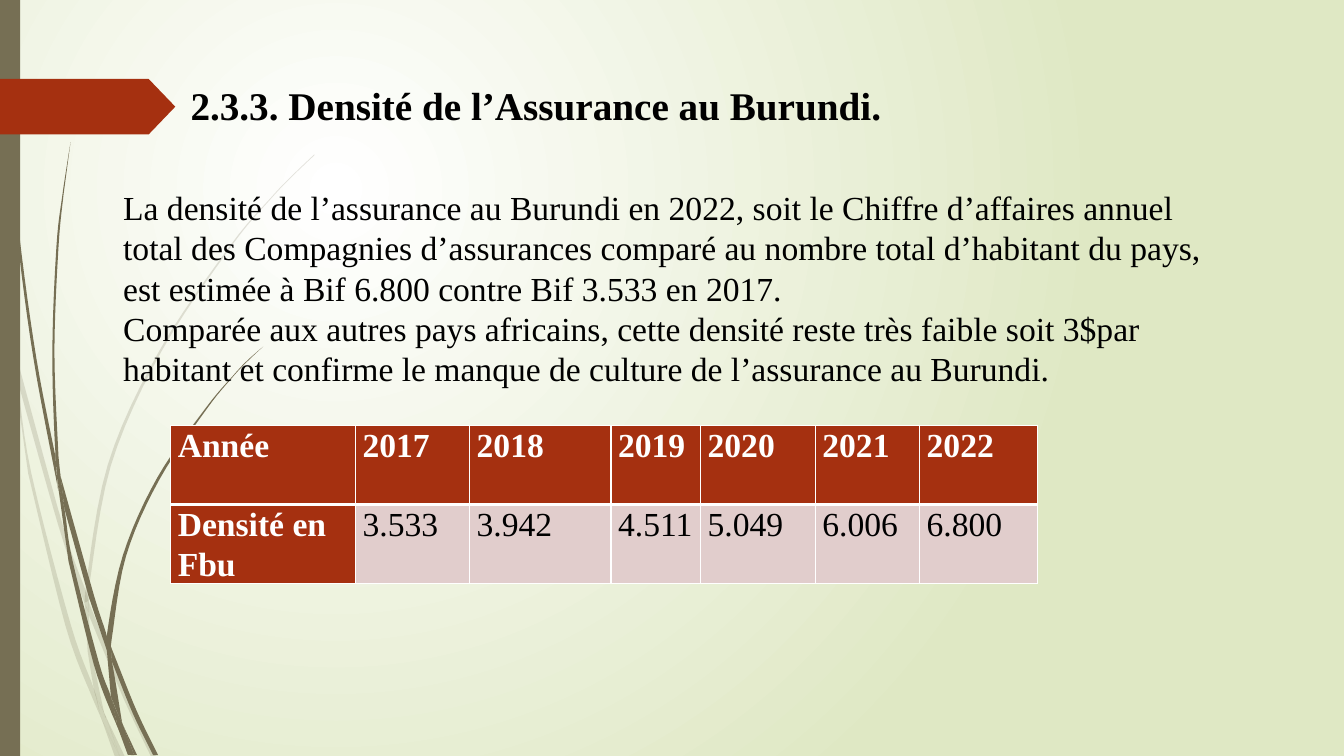
from lxml.etree import SubElement
from pptx import Presentation
from pptx.dml.color import RGBColor
from pptx.enum.shapes import MSO_SHAPE
from pptx.enum.text import MSO_ANCHOR, MSO_AUTO_SIZE, PP_ALIGN
from pptx.oxml.ns import qn
from pptx.util import Pt

WHITE = RGBColor(0xFF, 0xFF, 0xFF)
BLACK = RGBColor(0, 0, 0)
LIME = RGBColor(0xDF, 0xE8, 0xC4)
OLIVE = RGBColor(0x76, 0x6F, 0x54)
RUST = RGBColor(0xA5, 0x30, 0x10)
ROSE = RGBColor(0xE1, 0xCD, 0xCC)
FACE = "Times New Roman"

# Each blade part has two smooth edges: one way out, one way back.
PALE = [
    ([(0, 203), (6.5, 231.8), (7.9, 252)], [(7.2, 247.7), (0, 215.3)]),
    ([(10.1, 248.4), (44.6, 374.4), (61.2, 421.9)],
     [(60.5, 431.3), (41.8, 375.8), (12.2, 270.7)]),
    ([(63.4, 429.1), (66.2, 437), (91.4, 498.2), (111.6, 540.7)],
     [(108, 540.7), (88.6, 499.7), (63.4, 439.2)]),
    ([(75.6, 511.9), (89.3, 540.7)], [(85.7, 540.7)]),
    ([(7.9, 252), (12.2, 270.7), (22.3, 337.7), (50.4, 445.7), (67, 491.8),
      (71.3, 509), (72.7, 514.1)], [(66.2, 499), (46.8, 447.1), (20.2, 338.4)]),
    ([(60.5, 431.3), (63.4, 439.2), (65.5, 465.1), (74.2, 508.3), (75.6, 511.9)],
     [(69.1, 498.2), (67, 491.8), (62.6, 465.1)]),
    ([(224.6, 110.2), (208.1, 126), (193, 141.8), (164.2, 175.7), (113.8, 250.6),
      (77, 331.9), (61.2, 420.5), (63.4, 429.1)],
     [(63.4, 420.5), (79.2, 332.6), (115.2, 251.3), (164.9, 176.4), (193, 142.6),
      (208.8, 126), (224.6, 110.9)]),
    ([(72.7, 514.1), (85.7, 540.7)], [(82.1, 540.7)]),
    ([(61.2, 421.9), (63.4, 429.1), (63.4, 439.2)], [(63.4, 437.8), (60.5, 431.3)]),
    ([(67, 491.8), (69.1, 498.2), (75.6, 511.9), (85.7, 540.7)],
     [(72.7, 514.1), (71.3, 509)]),
]
DARK = [
    ([(2.2, 0), (2.9, 34.6), (5, 79.2), (12.2, 167.8), (23.8, 255.6), (40.3, 343.4),
      (41, 346.3)], [(39.6, 326.2), (25.9, 255.6), (13.7, 167), (5.8, 78.5),
                     (3.6, 34.6), (2.9, 0)]),
    ([(43.2, 339.8), (67, 424.8), (76.3, 454.3), (76.3, 464.4)],
     [(63.4, 426.2), (46.1, 363.6)]),
    ([(79.2, 461.5), (81.4, 467.3), (97.9, 508.3), (113, 539.3)],
     [(109.4, 539.3), (95, 509.8), (79.9, 472.3)]),
    ([(41, 343.4), (46.1, 363.6), (51.8, 400.3), (70.6, 473), (79.2, 497.5),
      (83.5, 516.2), (84.2, 519.8)], [(79.9, 509.8), (67, 474.5), (49, 401)]),
    ([(50.4, 101.5), (44.6, 139), (40.3, 176.4), (37.4, 251.3), (39.6, 323.3),
      (43.2, 339.8)], [(41.8, 326.2), (38.9, 251.3), (41.8, 176.4), (45.4, 139)]),
    ([(87.8, 517.7), (97.9, 539.3)], [(95.8, 539.3)]),
    ([(39.6, 323.3), (43.2, 339.8), (46.1, 363.6)], [(41, 343.4), (39.6, 326.2)]),
    ([(187.9, 247.7), (176.4, 257.8), (166.3, 268.6), (146.9, 291.6), (112.3, 341.3),
      (87.8, 396.7), (76.3, 454.3), (79.2, 461.5)],
     [(79.9, 455.8), (90, 397.4), (113.8, 342.7), (147.6, 292.3), (166.3, 269.3),
      (176.4, 258.5), (187.9, 247.7)]),
    ([(84.2, 519.8), (94.3, 539.3)], [(91.4, 539.3)]),
    ([(76.3, 464.4), (79.9, 472.3), (87.1, 515.5), (87.8, 517.7)],
     [(83.5, 508.3), (79.2, 497.5)]),
    ([(76.3, 454.3), (79.2, 461.5), (79.9, 472.3)], [(78.5, 468.7), (76.3, 464.4)]),
    ([(79.2, 497.5), (83.5, 508.3), (87.8, 517.7), (95.8, 539.3)],
     [(93.6, 539.3), (84.2, 519.8), (83.5, 516.2)]),
]
TITLE = "2.3.3. Densité de l’Assurance au Burundi."
BODY = [
    "La densité de l’assurance au Burundi en 2022, soit le Chiffre d’affaires "
    "annuel total des Compagnies d’assurances comparé au nombre total d’habitant "
    "du pays, est estimée à Bif 6.800 contre Bif 3.533 en 2017.",
    "Comparée aux autres pays africains, cette densité reste très faible soit "
    "3$par habitant et confirme le manque de culture de l’assurance au Burundi.",
]
ROWS = [["Année", "2017", "2018", "2019", "2020", "2021", "2022"],
        ["Densité en Fbu", "3.533", "3.942", "4.511", "5.049", "6.006", "6.800"]]
WIDTHS = [132, 81.5, 101, 64, 82, 74.5, 84]


def paint(shape, color):
    shape.shadow.inherit = False
    shape.fill.solid()
    shape.fill.fore_color.rgb = color
    shape.line.fill.background()


def style(para, size, bold, color):
    font = para.font
    font.name, font.size, font.bold = FACE, Pt(size), bold
    font.color.rgb = color


def smooth(dots, steps=6):
    ends = [dots[0]] + dots + [dots[-1]]
    out = []
    for four in zip(ends, ends[1:], ends[2:], ends[3:]):
        for t in (i / steps for i in range(steps)):
            out.append([q + t * (r - p + t * (2 * p - 5 * q + 4 * r - s
                                              + t * (3 * q - p - 3 * r + s))) / 2
                        for p, q, r, s in zip(*four)])
    return out + [dots[-1]]


def add_blade(slide, edges, alpha=None):
    dots = [(Pt(x), Pt(y)) for edge in edges for x, y in smooth(edge)]
    form = slide.shapes.build_freeform(*dots[0])
    form.add_line_segments(dots[1:], close=True)
    blade = form.convert_to_shape()
    paint(blade, OLIVE)
    if alpha:
        tone = blade.element.spPr.find(qn("a:solidFill"))[0]
        SubElement(tone, qn("a:alpha"), val=str(alpha * 1000))


def add_back(slide):
    fill = slide.background.fill
    fill.gradient()
    for stop, color, at in zip(fill.gradient_stops, (WHITE, LIME), (0, 1)):
        stop.color.rgb = color
        stop.position = at
    grad = next(slide.element.iter(qn("a:gradFill")))
    grad.remove(grad.find(qn("a:lin")))
    path = SubElement(grad, qn("a:path"), path="circle")
    SubElement(path, qn("a:fillToRect"), l="25000", t="25000", r="75000", b="75000")


def add_decor(slide, high):
    for group, alpha in ((PALE, 20), (DARK, None)):
        for edges in group:
            add_blade(slide, edges, alpha)
    bar = slide.shapes.add_shape(MSO_SHAPE.RECTANGLE, 0, 0, Pt(14.4), high)
    paint(bar, OLIVE)
    flag = slide.shapes.add_shape(MSO_SHAPE.PENTAGON, 0, Pt(56.4), Pt(125.2), Pt(39.6))
    flag.adjustments[0] = 0.48
    paint(flag, RUST)


def add_text(holder, box, lines, size, bold):
    holder.left, holder.top, holder.width, holder.height = map(Pt, box)
    holder.element.getparent().append(holder.element)
    frame = holder.text_frame
    frame.word_wrap = True
    frame.auto_size = MSO_AUTO_SIZE.NONE
    frame.vertical_anchor = MSO_ANCHOR.MIDDLE
    frame.text = "\n".join(lines)
    for para in frame.paragraphs:
        style(para, size, bold, BLACK)
        para.alignment = PP_ALIGN.LEFT
        para.space_before = Pt(0)
        props = para._p.get_or_add_pPr()
        props.set("marL", "0")
        props.set("indent", "0")
        props.insert_element_before(
            props.makeelement(qn("a:buNone")), "a:tabLst", "a:defRPr", "a:extLst")


def add_edges(cell, top, low):
    props = cell._tc.get_or_add_tcPr()
    for side, wide in zip("LRTB", (1, 1, top, low)):
        line = SubElement(props, qn(f"a:ln{side}"), w=str(Pt(wide)))
        SubElement(SubElement(line, qn("a:solidFill")), qn("a:srgbClr"), val=str(WHITE))


def add_grid(slide, left, top, high):
    table = slide.shapes.add_table(len(ROWS), len(WIDTHS), Pt(left), Pt(top),
                                   Pt(sum(WIDTHS)), Pt(high)).table
    table.horz_banding = False
    for col, wide in zip(table.columns, WIDTHS):
        col.width = Pt(wide)
    for i, row in enumerate(ROWS):
        for j, word in enumerate(row):
            cell = table.cell(i, j)
            head = i == 0 or j == 0
            add_edges(cell, 3 if i else 1, 1 if i else 3)
            cell.fill.solid()
            cell.fill.fore_color.rgb = RUST if head else ROSE
            cell.margin_left = cell.margin_right = Pt(5)
            cell.margin_top = cell.margin_bottom = 0
            cell.text = word
            para = cell.text_frame.paragraphs[0]
            para.line_spacing = 1.07
            para.space_after = Pt(8)
            style(para, 24, head, WHITE if head else BLACK)


def main():
    deck = Presentation()
    deck.slide_width, deck.slide_height = Pt(960), Pt(540)
    slide = deck.slides.add_slide(deck.slide_layouts[1])
    title, body = slide.placeholders
    add_back(slide)
    add_decor(slide, deck.slide_height)
    add_grid(slide, 122, 303.8, 113)
    add_text(body, (80.8, 129.2, 798.5, 152.6), BODY, 24, False)
    add_text(title, (128.9, 54.7, 520.6, 41), [TITLE], 28, True)
    deck.save("out.pptx")


if __name__ == "__main__":
    main()
